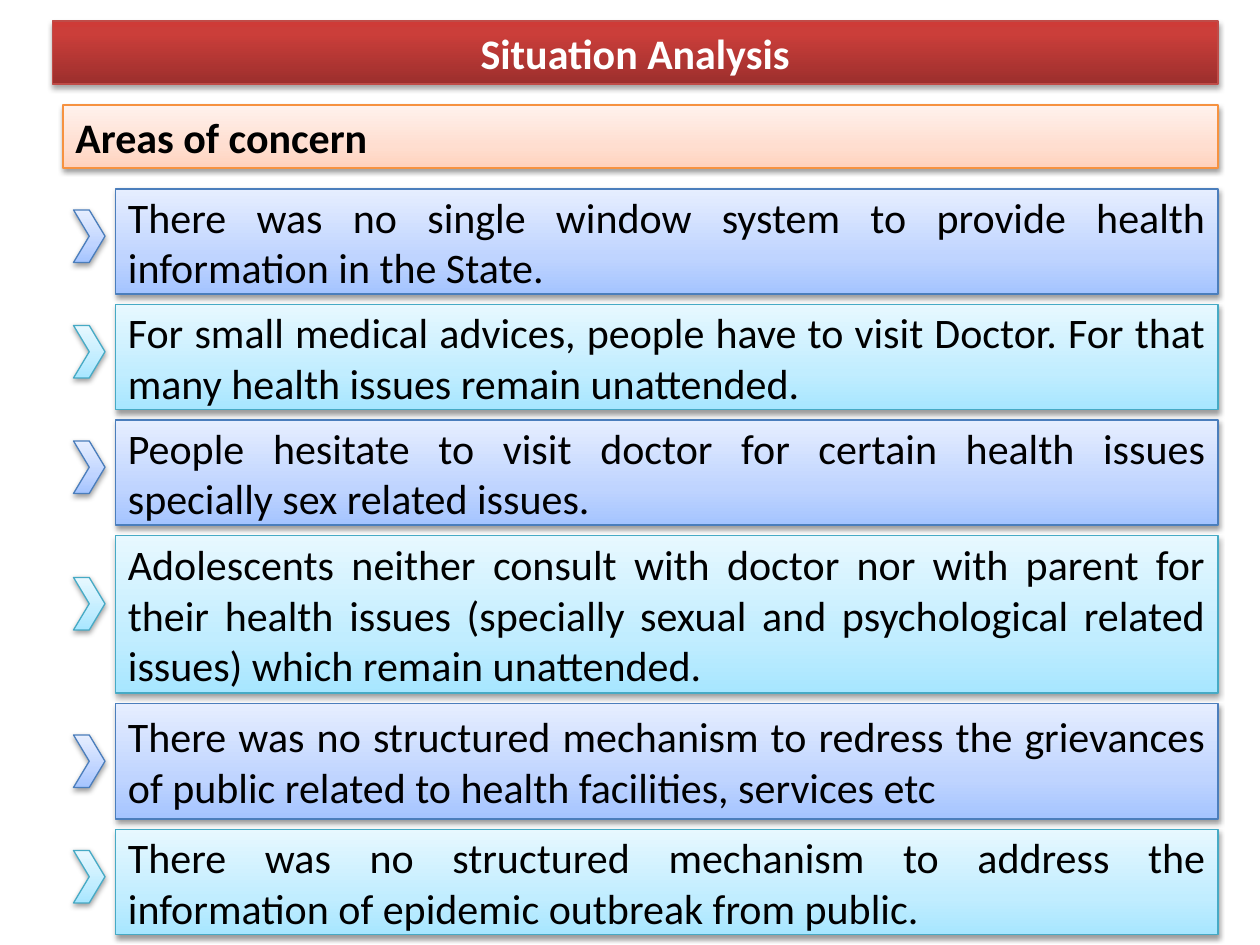
"""Build the Situation Analysis slide: a title, a heading and six areas of concern."""
from lxml.etree import SubElement
from pptx import Presentation
from pptx.dml.color import RGBColor
from pptx.enum.shapes import MSO_SHAPE as Preset
from pptx.enum.text import MSO_ANCHOR as Anchor, MSO_AUTO_SIZE as AutoSize, PP_ALIGN as Align
from pptx.oxml.ns import qn
from pptx.util import Inches, Pt

BLACK = RGBColor(0x00, 0x00, 0x00)
WHITE = RGBColor(0xFF, 0xFF, 0xFF)


def look(line, stops, text=BLACK, shadow_alpha=38, shadow_distance=1.57):
    return {"line": RGBColor.from_string(line),
            "stops": [(position, RGBColor.from_string(color)) for position, color in stops],
            "text": text, "alpha": shadow_alpha, "distance": shadow_distance}


RED = look("BF4C48", [(0, "9C2F2D"), (80, "CB3E3A"), (100, "CE3B37")], WHITE, 35, 1.81)
ORANGE = look("F69240", [(0, "FFD2BD"), (35, "FFDED0"), (100, "FFF2ED")])
BLUE = look("4B7EBC", [(0, "A4C4FF"), (35, "BFD4FF"), (100, "E6EEFF")])
AQUA = look("46AAC5", [(0, "A7E6FF"), (35, "C1EDFF"), (100, "E7F8FF")])

TITLE = "Situation Analysis"
HEADING = "Areas of concern"
CONCERNS = [
    ("There was no single window system to provide health information in the State.", 10, 2),
    ("For small medical advices, people have to visit Doctor. "
     "For that many health issues remain unattended.", 10, 2),
    ("People hesitate to visit doctor for certain health issues "
     "specially sex related issues.", 10, 2),
    ("Adolescents neither consult with doctor nor with parent for their health issues "
     "(specially sexual and psychological related issues) which remain unattended.", 15, 4),
    ("There was no structured mechanism to redress the grievances of public "
     "related to health facilities, services etc", 11, 3),
    ("There was no structured mechanism to address the information "
     "of epidemic outbreak from public.", 10, 2),
]

GRID = Inches(1) / 12
RIGHT = 116
BAR_HEIGHT = 6
CONCERN_LEFT, CONCERN_TOP, CONCERN_GAP = 11, 18, 1
CHEVRON_LEFT, CHEVRON_WIDTH, CHEVRON_HEIGHT = 7, 3, 5


def add_color(parent, color):
    return SubElement(parent, qn("a:srgbClr"), val=str(color))


def add_panel(slide, preset, left, top, width, height, style):
    panel = slide.shapes.add_shape(
        preset, *(round(cells * GRID) for cells in (left, top, width, height)))
    panel.fill.gradient()
    panel.fill.gradient_angle = 90
    panel.line.color.rgb = style["line"]
    panel.line.width = Pt(0.75)
    panel.shadow.inherit = False
    properties = panel.element.spPr
    stop_list = properties.find(qn("a:gradFill")).find(qn("a:gsLst"))
    stop_list.clear()
    for position, color in style["stops"]:
        add_color(SubElement(stop_list, qn("a:gs"), pos=str(position * 1000)), color)
    shadow = SubElement(properties.find(qn("a:effectLst")), qn("a:outerShdw"),
                        blurRad=str(Pt(3.15)), dist=str(Pt(style["distance"])),
                        dir="5400000", rotWithShape="0")
    SubElement(add_color(shadow, BLACK), qn("a:alpha"), val=str(style["alpha"] * 1000))
    return panel


def add_text_panel(slide, text, left, top, height, style, align, bold=False):
    panel = add_panel(slide, Preset.RECTANGLE, left, top, RIGHT - left, height, style)
    frame = panel.text_frame
    frame.word_wrap = True
    frame.vertical_anchor = Anchor.MIDDLE
    paragraph = frame.paragraphs[0]
    paragraph.alignment = align
    run = paragraph.add_run()
    run.text = text
    for name, value in {"name": "Calibri", "size": Pt(24), "bold": bold}.items():
        setattr(run.font, name, value)
    run.font.color.rgb = style["text"]
    return panel


def main():
    deck = Presentation()
    deck.slide_width, deck.slide_height = Inches(10), Inches(7.5)
    slide = deck.slides.add_slide(deck.slide_layouts[6])

    title = add_text_panel(slide, TITLE, 5, 2, BAR_HEIGHT, RED, Align.CENTER, bold=True)
    title.text_frame.auto_size = AutoSize.SHAPE_TO_FIT_TEXT
    add_text_panel(slide, HEADING, 6, 10, BAR_HEIGHT, ORANGE, Align.LEFT, bold=True)

    top = CONCERN_TOP
    for index, (concern, height, chevron_drop) in enumerate(CONCERNS):
        style = (BLUE, AQUA)[index % 2]
        add_text_panel(slide, concern, CONCERN_LEFT, top, height, style, Align.JUSTIFY)
        add_panel(slide, Preset.CHEVRON, CHEVRON_LEFT, top + chevron_drop,
                  CHEVRON_WIDTH, CHEVRON_HEIGHT, style)
        top += height + CONCERN_GAP

    deck.save("out.pptx")


if __name__ == "__main__":
    main()
